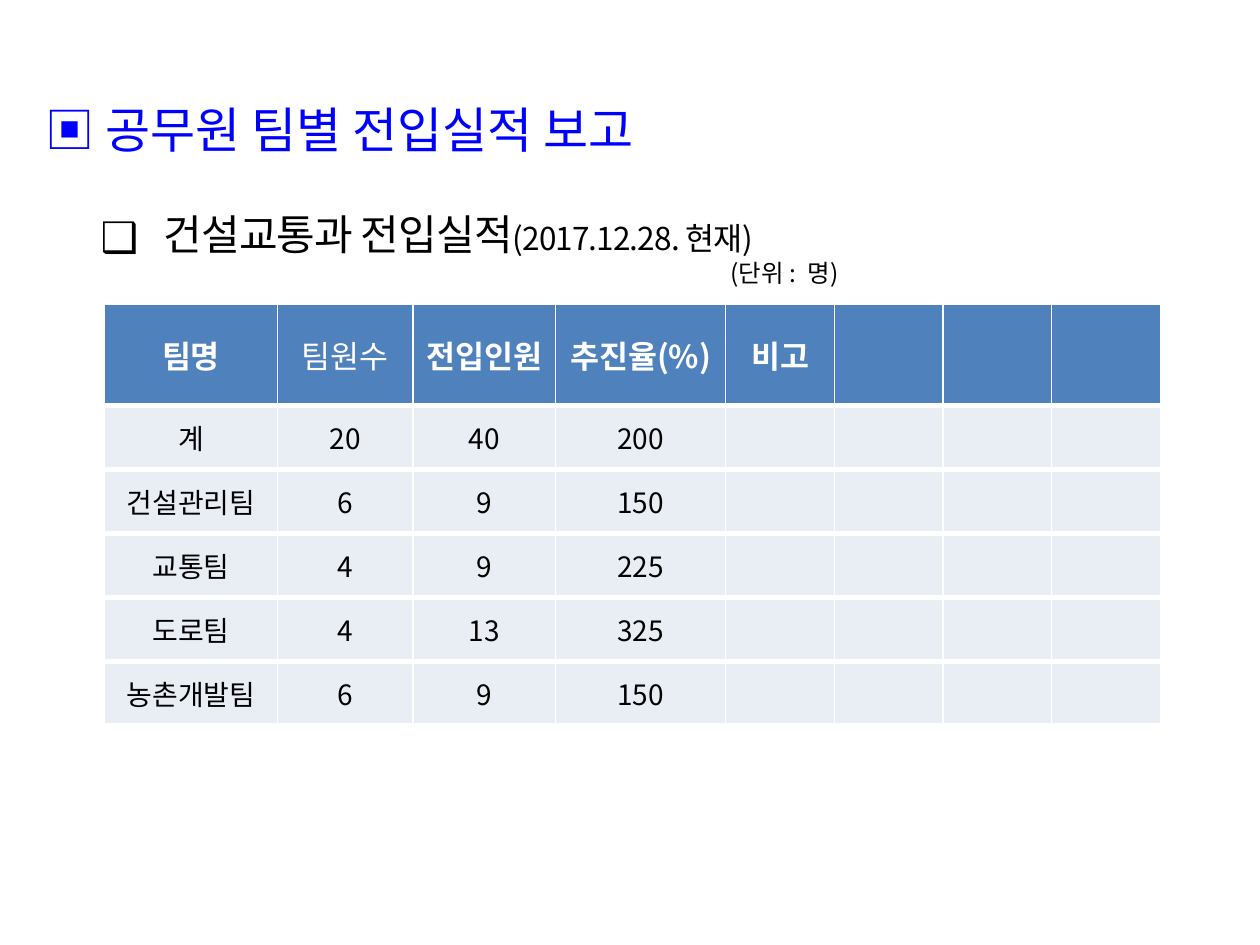
from dataclasses import dataclass

from lxml.etree import SubElement
from pptx import Presentation
from pptx.dml.color import RGBColor
from pptx.enum.text import MSO_ANCHOR, PP_ALIGN
from pptx.oxml import parse_xml
from pptx.oxml.ns import nsdecls, qn
from pptx.util import Cm, Pt

BLUE = RGBColor(0x00, 0x00, 0xFF)
BLACK = RGBColor(0x00, 0x00, 0x00)
WHITE = RGBColor(0xFF, 0xFF, 0xFF)
HEAD = RGBColor(0x4F, 0x81, 0xBD)
BODY = RGBColor(0xE9, 0xED, 0xF4)
FONT = "Noto Sans CJK KR"


@dataclass
class Style:
    size: int
    color: RGBColor
    bold: bool = False
    align: PP_ALIGN = PP_ALIGN.LEFT


@dataclass
class Box:
    left: float
    top: float
    width: float
    height: float

    def place(self) -> tuple:
        return Cm(self.left), Cm(self.top), Cm(self.width), Cm(self.height)


TITLE = Style(28, BLUE)
TOPIC = Style(24, BLACK)
UNIT = Style(14, BLACK, align=PP_ALIGN.RIGHT)
LABEL = Style(18, WHITE, True, PP_ALIGN.CENTER)
PLAIN = Style(18, WHITE, False, PP_ALIGN.CENTER)
VALUE = Style(16, BLACK, False, PP_ALIGN.CENTER)

WIDTHS = [3.48, 2.74, 2.87, 3.43] + [2.19] * 4
HEIGHTS = [2.05] + [1.29] * 5
ROWS = [
    ["팀명", "팀원수", "전입인원", "추진율(%)", "비고"],
    ["계", "20", "40", "200"],
    ["건설관리팀", "6", "9", "150"],
    ["교통팀", "4", "9", "225"],
    ["도로팀", "4", "13", "325"],
    ["농촌개발팀", "6", "9", "150"],
]


def write(para, text: str, style: Style) -> None:
    para.text = text
    para.alignment = style.align
    font = para.font
    font.name, font.size, font.bold = FONT, Pt(style.size), style.bold
    font.color.rgb = style.color
    for run in para.runs:
        set_face(run)


def set_face(run) -> None:
    """Name the font for Latin and for Korean letters."""
    run.font.name = FONT
    SubElement(run.font._element, qn("a:ea"), typeface=FONT)


def add_text(slide, box: Box, text: str, style: Style):
    frame = slide.shapes.add_textbox(*box.place()).text_frame
    frame.word_wrap = True
    frame.vertical_anchor = MSO_ANCHOR.MIDDLE
    write(frame.paragraphs[0], text, style)
    return frame.paragraphs[0]


def add_bullet(para, mark: str, indent: float) -> None:
    props = para._p.get_or_add_pPr()
    props.set("marL", str(Cm(indent)))
    props.set("indent", str(-Cm(indent)))
    SubElement(props, qn("a:buFont"), typeface=FONT)
    SubElement(props, qn("a:buChar"), char=mark)
    # the bullet must come before the default run properties
    props.append(props.find(qn("a:defRPr")))


def add_borders(cell, top: int) -> None:
    props = cell._tc.get_or_add_tcPr()
    sides = {"lnL": 1, "lnR": 1, "lnT": top, "lnB": 3}
    for spot, (side, width) in enumerate(sides.items()):
        props.insert(spot, parse_xml(
            f'<a:{side} {nsdecls("a")} w="{Pt(width)}"><a:solidFill>'
            f'<a:srgbClr val="{WHITE}"/></a:solidFill></a:{side}>'))


def fill_cell(cell, text: str, head: bool) -> None:
    cell.fill.solid()
    cell.fill.fore_color.rgb = HEAD if head else BODY
    cell.vertical_anchor = MSO_ANCHOR.MIDDLE
    add_borders(cell, 1 if head else 3)
    if text:
        style = VALUE if not head else PLAIN if text == "팀원수" else LABEL
        write(cell.text_frame.paragraphs[0], text, style)


def add_grid(slide, left: float, top: float) -> None:
    box = Box(left, top, sum(WIDTHS), sum(HEIGHTS))
    table = slide.shapes.add_table(
        len(HEIGHTS), len(WIDTHS), *box.place()).table
    for col, width in zip(table.columns, WIDTHS):
        col.width = Cm(width)
    for row, height in zip(table.rows, HEIGHTS):
        row.height = Cm(height)
    for r, row in enumerate(ROWS):
        for c in range(len(WIDTHS)):
            text = row[c] if c < len(row) else ""
            fill_cell(table.cell(r, c), text, r == 0)


def main() -> None:
    deck = Presentation()
    deck.slide_width, deck.slide_height = Cm(25.4), Cm(19.05)
    slide = deck.slides.add_slide(deck.slide_layouts[5])

    title = slide.shapes.title
    title.left, title.top, title.width, title.height = Box(
        0.66, 1.7, 23.5, 1.8).place()
    title.text_frame.vertical_anchor = MSO_ANCHOR.MIDDLE
    write(title.text_frame.paragraphs[0], "▣ 공무원 팀별 전입실적 보고", TITLE)

    topic = add_text(slide, Box(1.78, 3.92, 20, 1.6), "건설교통과 전입실적", TOPIC)
    date = topic.add_run()
    date.text = "(2017.12.28. 현재)"
    date.font.size = Pt(18)
    set_face(date)
    for run in topic.runs:
        run.font._element.set("spc", "-50")
    add_bullet(topic, "❑", 1.27)

    add_text(slide, Box(12.15, 5.03, 5, 0.95), "(단위 :  명)", UNIT)
    add_grid(slide, 2.11, 6.13)
    deck.save("out.pptx")


if __name__ == "__main__":
    main()
